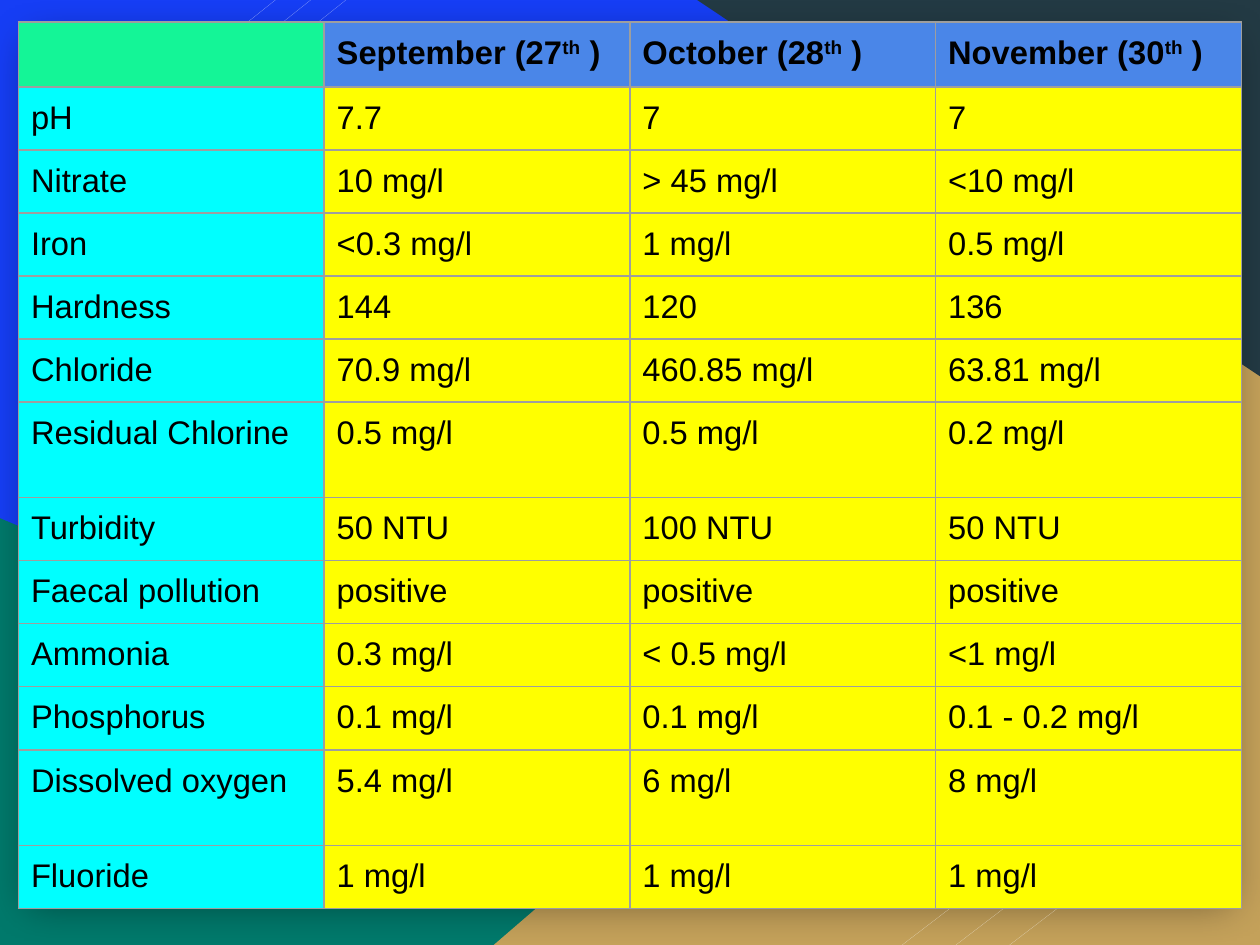
from lxml import etree
from pptx import Presentation, util as u
from pptx.dml.color import RGBColor
from pptx.enum import shapes, text
from pptx.oxml import parse_xml
from pptx.oxml.ns import nsdecls, qn

WIDTH = 7.5
HEIGHT = WIDTH * 3 / 4
FONT, SIZE = "Arial", 14
CELL_MARGIN = u.Pt(5.4)
COLOURS = {
    "blue": "163EF5", "teal": "00796B", "sand": "C4A15A", "slate": "233A44",
    "white": "FFFFFF", "corner": "14F597", "header": "4A86E8",
    "label": "00FFFF", "reading": "FFFF00", "border": "9E9E9E", "ink": "000000",
}
MONTHS = [("September", 27), ("October", 28), ("November", 30)]
READINGS = [
    ("pH", "7.7", "7", "7"),
    ("Nitrate", "10 mg/l", "> 45 mg/l", "<10 mg/l"),
    ("Iron", "<0.3 mg/l", "1 mg/l", "0.5 mg/l"),
    ("Hardness", "144", "120", "136"),
    ("Chloride", "70.9 mg/l", "460.85 mg/l", "63.81 mg/l"),
    ("Residual Chlorine", "0.5 mg/l", "0.5 mg/l", "0.2 mg/l"),
    ("Turbidity", "50 NTU", "100 NTU", "50 NTU"),
    ("Faecal pollution", "positive", "positive", "positive"),
    ("Ammonia", "0.3 mg/l", "< 0.5 mg/l", "<1 mg/l"),
    ("Phosphorus", "0.1 mg/l", "0.1 mg/l", "0.1 - 0.2 mg/l"),
    ("Dissolved oxygen", "5.4 mg/l", "6 mg/l", "8 mg/l"),
    ("Fluoride", "1 mg/l", "1 mg/l", "1 mg/l"),
]
TALL_ROWS = {"Residual Chlorine", "Dissolved oxygen"}


def rgb(name):
    return RGBColor.from_string(COLOURS[name])


def add_panel(slide, preset, box, colour):
    panel = slide.shapes.add_shape(preset, *(u.Inches(length) for length in box))
    panel.shadow.inherit = False
    panel.fill.solid()
    panel.fill.fore_color.rgb = rgb(colour)
    panel.line.fill.background()
    return panel


def add_corners(slide, box):
    left, top, width, height = box
    right, bottom = left + width, top + height
    triangle = shapes.MSO_SHAPE.RIGHT_TRIANGLE
    add_panel(slide, triangle, (left, bottom - 2.54, 6.05, 2.54), "teal")
    sand = add_panel(slide, triangle, (right - 4.56, bottom - 3.93, 4.56, 3.93), "sand")
    sand._element.spPr.find(qn("a:xfrm")).set("flipH", "1")
    add_panel(slide, triangle, (right - 3.35, top, 3.35, 2.24), "slate").rotation = 180


def add_card(slide, box):
    card = add_panel(slide, shapes.MSO_SHAPE.RECTANGLE, box, "white")
    effects = card._element.spPr.find(qn("a:effectLst"))
    effects.append(parse_xml(
        f'<a:outerShdw {nsdecls("a")} blurRad="{u.Pt(18)}" dist="0" dir="0" algn="ctr" rotWithShape="0">'
        f'<a:srgbClr val="{COLOURS["ink"]}"><a:alpha val="40000"/></a:srgbClr></a:outerShdw>'))


def add_stripes(slide, box, step, slant):
    left, top, width, height = box
    for position in (2, 1, 0):
        stripe = add_panel(slide, shapes.MSO_SHAPE.PARALLELOGRAM,
                           (left + position * step, top, width, height), "white")
        stripe.adjustments[0] = slant


def add_text(paragraph, wording, bold=False, raised=0):
    run = paragraph.add_run()
    run.text = wording
    run.font.name = FONT
    run.font.size = u.Pt(SIZE)
    run.font.bold = bold
    run.font.color.rgb = rgb("ink")
    if raised:
        run._r.get_or_add_rPr().set("baseline", str(raised * 1000))


def format_cell(cell, fill):
    cell.margin_left = cell.margin_right = CELL_MARGIN
    cell.margin_top = cell.margin_bottom = CELL_MARGIN
    cell.vertical_anchor = text.MSO_ANCHOR.TOP
    properties = cell._tc.get_or_add_tcPr()
    for side in ("lnL", "lnR", "lnT", "lnB"):
        properties.append(parse_xml(
            f'<a:{side} {nsdecls("a")} w="{u.Pt(0.75)}"><a:solidFill>'
            f'<a:srgbClr val="{COLOURS["border"]}"/></a:solidFill></a:{side}>'))
    cell.fill.solid()
    cell.fill.fore_color.rgb = rgb(fill)


def add_readings(slide, box):
    left, top, width, height = box
    columns = len(MONTHS) + 1
    frame = slide.shapes.add_table(len(READINGS) + 1, columns,
                                   *(u.Inches(length) for length in box))
    grid = frame.table
    grid.first_row = grid.horz_banding = False
    for column in grid.columns:
        column.width = u.Inches(width / columns)
    tall = 0.57
    normal = (height - tall * len(TALL_ROWS)) / (len(READINGS) + 1 - len(TALL_ROWS))
    for row in grid.rows:
        row.height = u.Inches(normal)

    corner = grid.cell(0, 0)
    format_cell(corner, "corner")
    etree.SubElement(corner.text_frame.paragraphs[0]._p, qn("a:endParaRPr"), sz=str(SIZE * 100))
    for column, (month, day) in enumerate(MONTHS, 1):
        cell = grid.cell(0, column)
        format_cell(cell, "header")
        heading = cell.text_frame.paragraphs[0]
        add_text(heading, f"{month} ({day}", bold=True)
        add_text(heading, "th", bold=True, raised=30)
        add_text(heading, " )", bold=True)
    for row, values in enumerate(READINGS, 1):
        if values[0] in TALL_ROWS:
            grid.rows[row].height = u.Inches(tall)
        for column, value in enumerate(values):
            cell = grid.cell(row, column)
            format_cell(cell, "reading" if column else "label")
            add_text(cell.text_frame.paragraphs[0], value)


def build_water_quality_slide(deck):
    slide = deck.slides.add_slide(deck.slide_layouts[6])
    slide.background.fill.solid()
    slide.background.fill.fore_color.rgb = rgb("blue")
    add_corners(slide, (0, 0, WIDTH, HEIGHT))
    add_card(slide, (0.17, 0.23, 7.17, 5.17))
    add_stripes(slide, (0.21, 0, 1.43, 1.14), 0.21, 1.53)
    add_stripes(slide, (5.37, HEIGHT - 1.01, 1.32, 1.01), 0.32, 1.58)
    add_readings(slide, (0.11, 0.13, 7.28, 5.27))


def main():
    deck = Presentation()
    deck.slide_width, deck.slide_height = u.Inches(WIDTH), u.Inches(HEIGHT)
    build_water_quality_slide(deck)
    deck.save("out.pptx")


if __name__ == "__main__":
    main()
